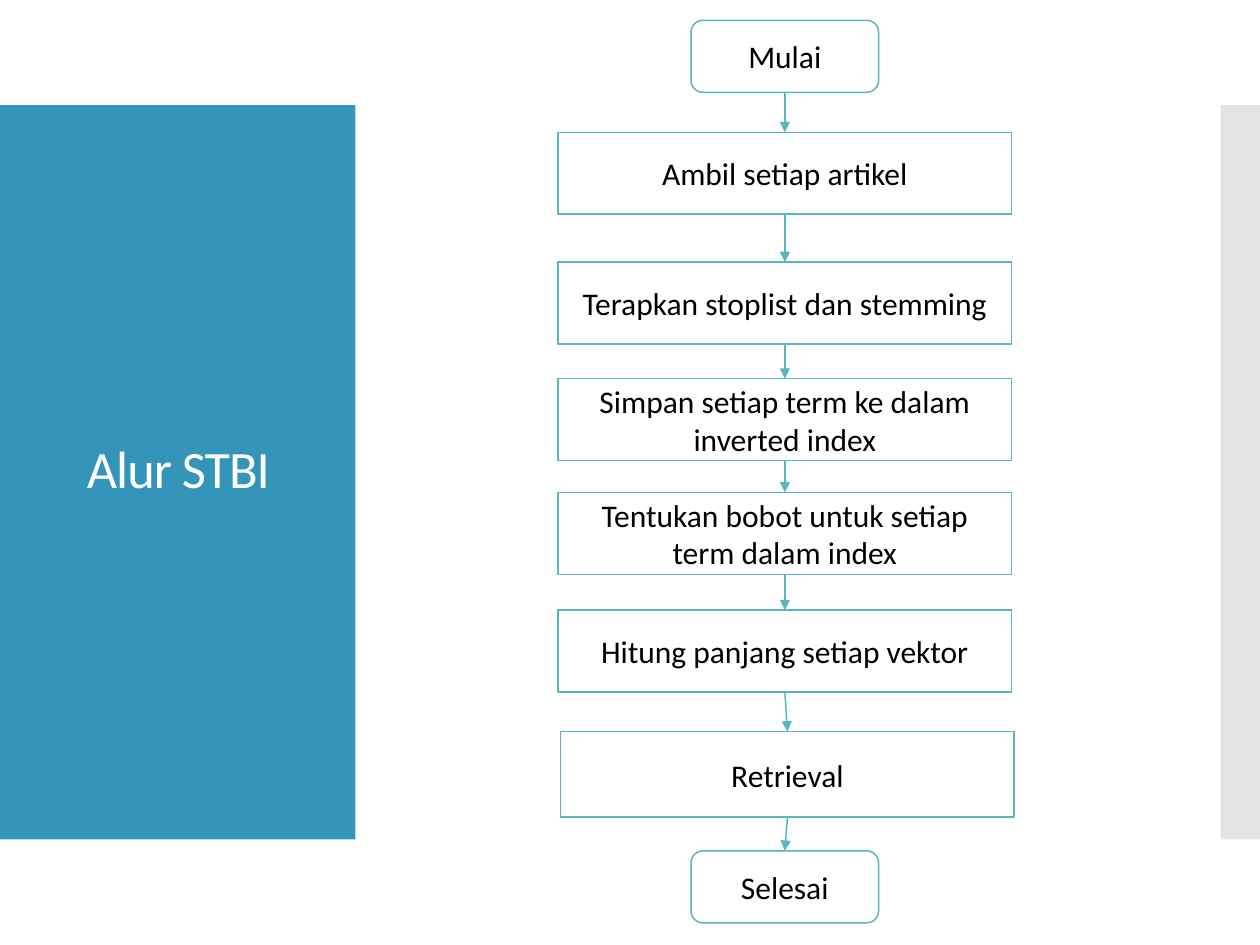
import dataclasses
import itertools

import lxml.etree
import pptx
import pptx.dml.color
import pptx.enum.shapes
import pptx.enum.text
import pptx.oxml.ns
import pptx.shapes.autoshape
import pptx.slide
import pptx.util

Pt = pptx.util.Pt
RGB = pptx.dml.color.RGBColor
Geometry = pptx.enum.shapes.MSO_SHAPE
qn = pptx.oxml.ns.qn


@dataclasses.dataclass(frozen=True)
class Theme:
    font: str = "Calibri"
    title_size: float = 30
    step_size: float = 18
    line_width: float = 0.85
    panel: str = "3494BA"
    edge_strip: str = "C8C8C8"
    outline: str = "58B6C0"
    paper: str = "FFFFFF"
    ink: str = "000000"


@dataclasses.dataclass(frozen=True)
class Step:
    label: str
    top: float
    height: float = 46.8
    width: float = 259.2
    center: float = 448.5
    geometry: Geometry = Geometry.RECTANGLE


THEME = Theme()
TERMINAL = {"height": 41.2, "width": 107.2, "geometry": Geometry.ROUNDED_RECTANGLE}
STEPS = [
    Step("Mulai", 11.6, **TERMINAL),
    Step("Ambil setiap artikel", 75.6),
    Step("Terapkan stoplist dan stemming", 149.8),
    Step("Simpan setiap term ke dalam inverted index", 216.4),
    Step("Tentukan bobot untuk setiap term dalam index", 281.4),
    Step("Hitung panjang setiap vektor", 348.7),
    Step("Retrieval", 418, height=49, center=450),
    Step("Selesai", 486.2, **TERMINAL),
]


def write_text(
    shape: pptx.shapes.autoshape.Shape,
    text: str,
    *,
    size: float,
    color: str,
    line_spacing: float = 1.0,
    tracking: float = 0,
) -> None:
    frame = shape.text_frame
    frame.word_wrap = True
    frame.vertical_anchor = pptx.enum.text.MSO_ANCHOR.MIDDLE
    paragraph = frame.paragraphs[0]
    paragraph.alignment = pptx.enum.text.PP_ALIGN.CENTER
    paragraph.line_spacing = line_spacing
    run = paragraph.add_run()
    run.text = text
    run.font.name = THEME.font
    run.font.size = Pt(size)
    run.font.color.rgb = RGB.from_string(color)
    if tracking:
        run.font._element.set("spc", str(round(tracking * 100)))


def draw_block(
    slide: pptx.slide.Slide,
    left: float,
    top: float,
    width: float,
    height: float,
    *,
    fill: str,
    outline: str = "",
    geometry: Geometry = Geometry.RECTANGLE,
) -> pptx.shapes.autoshape.Shape:
    block = slide.shapes.add_shape(geometry, Pt(left), Pt(top), Pt(width), Pt(height))
    block.shadow.inherit = False
    block.fill.solid()
    block.fill.fore_color.rgb = RGB.from_string(fill)
    if outline:
        block.line.color.rgb = RGB.from_string(outline)
        block.line.width = Pt(THEME.line_width)
    else:
        block.line.fill.background()
    return block


def draw_step(slide: pptx.slide.Slide, step: Step) -> pptx.shapes.autoshape.Shape:
    box = draw_block(
        slide, step.center - step.width / 2, step.top, step.width, step.height,
        fill=THEME.paper, outline=THEME.outline, geometry=step.geometry,
    )
    write_text(box, step.label, size=THEME.step_size, color=THEME.ink)
    return box


def draw_arrow(
    slide: pptx.slide.Slide,
    upper: pptx.shapes.autoshape.Shape,
    lower: pptx.shapes.autoshape.Shape,
) -> None:
    arrow = slide.shapes.add_connector(
        pptx.enum.shapes.MSO_CONNECTOR.STRAIGHT, Pt(0), Pt(0), Pt(0), Pt(0)
    )
    arrow.begin_connect(upper, 2)
    arrow.end_connect(lower, 0)
    arrow.line.color.rgb = RGB.from_string(THEME.outline)
    arrow.line.width = Pt(THEME.line_width)
    lxml.etree.SubElement(arrow.line._get_or_add_ln(), qn("a:tailEnd"), type="triangle")
    lxml.etree.SubElement(arrow._element.spPr, qn("a:effectLst"))


def main() -> None:
    deck = pptx.Presentation()
    deck.slide_width, deck.slide_height = Pt(720), Pt(540)
    slide = deck.slides.add_slide(deck.slide_layouts[6])

    draw_block(slide, 0, 60, 203.2, 419.6, fill=THEME.panel)
    strip = draw_block(slide, 697.5, 60, 22.5, 419.6, fill=THEME.edge_strip)
    strip_color = strip._element.spPr.find(qn("a:solidFill")).find(qn("a:srgbClr"))
    lxml.etree.SubElement(strip_color, qn("a:alpha"), val="50000")

    title = slide.shapes.add_textbox(Pt(15), Pt(88.5), Pt(174), Pt(362))
    write_text(
        title, "Alur STBI", size=THEME.title_size, color=THEME.paper,
        line_spacing=0.9, tracking=-0.6,
    )

    boxes = [draw_step(slide, step) for step in STEPS]
    for upper, lower in itertools.pairwise(boxes):
        draw_arrow(slide, upper, lower)

    deck.save("out.pptx")


if __name__ == "__main__":
    main()
